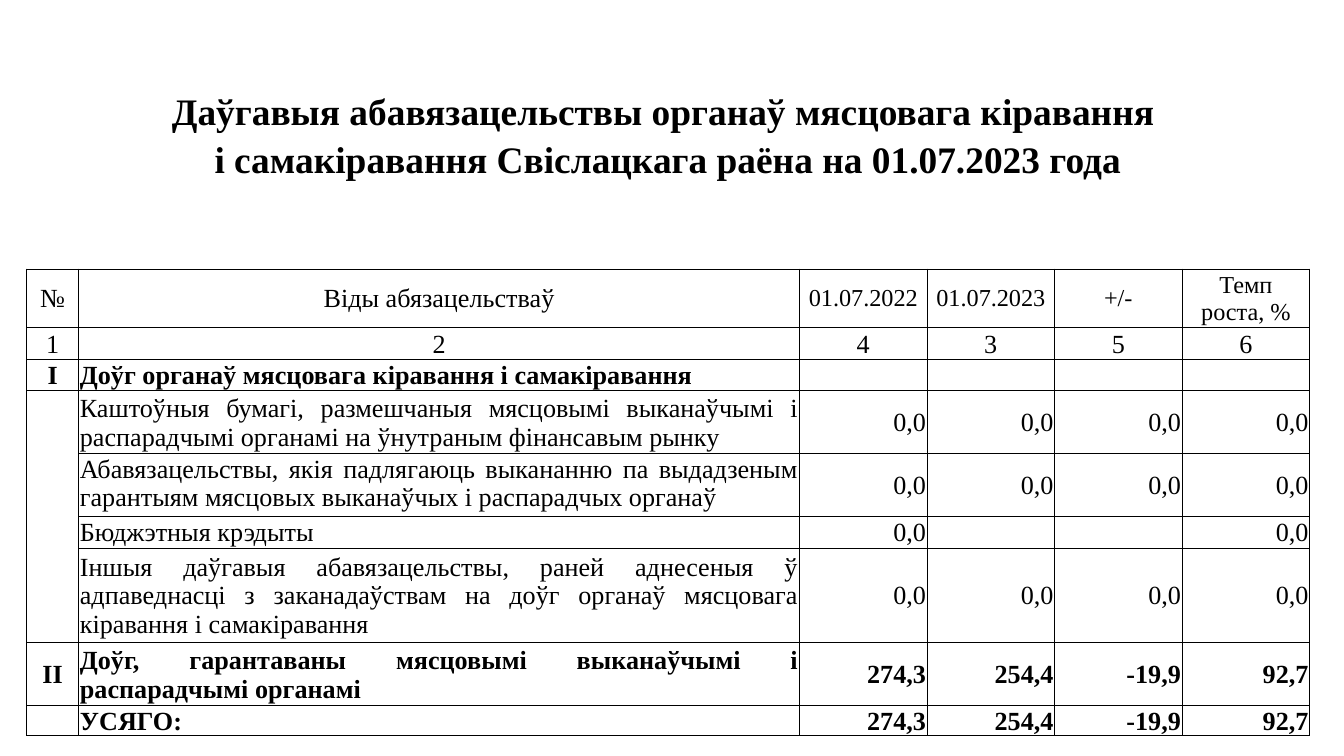
from lxml.etree import SubElement
from pptx import Presentation
from pptx.dml.color import RGBColor
from pptx.enum.text import MSO_ANCHOR, PP_ALIGN
from pptx.oxml.ns import qn
from pptx.util import Cm, Pt

FONT = "Times New Roman"
BLACK, WHITE = "000000", "FFFFFF"

# Content
TITLE = ["Даўгавыя абавязацельствы органаў мясцовага кіравання ",
         "і самакіравання Свіслацкага раёна на 01.07.2023 года"]
HEADER = ["№", "Віды абязацельстваў", "01.07.2022", "01.07.2023", "+/-", "Темп\nроста, %"]
NUMBERS = ["1", "2", "4", "3", "5", "6"]
ZEROS = ["0,0"] * 4
TOTALS = ["274,3", "254,4", "-19,9", "92,7"]
DEBTS = [
    ["I", "Доўг органаў мясцовага кіравання і самакіравання", "", "", "", ""],
    ["", "Каштоўныя бумагі, размешчаныя мясцовымі выканаўчымі і распарадчымі "
         "органамі на ўнутраным фінансавым рынку", *ZEROS],
    ["", "Абавязацельствы, якія падлягаюць выкананню па выдадзеным гарантыям "
         "мясцовых выканаўчых і распарадчых органаў", *ZEROS],
    ["", "Бюджэтныя крэдыты", "0,0", "", "", "0,0"],
    ["", "Іншыя даўгавыя абавязацельствы, раней аднесеныя ў адпаведнасці з "
         "заканадаўствам на доўг органаў мясцовага кіравання і самакіравання", *ZEROS],
    ["II", "Доўг, гарантаваны мясцовымі выканаўчымі і распарадчымі органамі", *TOTALS],
    ["", "УСЯГО:", *TOTALS],
]

# Layout in centimetres
COLS = [0.99, 13.62] + [2.41] * 4
ROWS = [0.97, 1.93, 0.97, 0.68, 1.1, 0.6, 0.6, 1.19, 1.19, 0.6, 1.78, 1.19, 0.46]
TITLE_ROW, HEADER_ROW, NUMBER_ROW, DEBT_ROW = 1, 4, 5, 6
BOLD_ROWS = {6, 11, 12}
OPEN_FIRST, OPEN_LAST = 7, 10    # rows sharing one open cell in the first column


def color(value):
    return RGBColor.from_string(value)


def write(cell, text, size=14, bold=False, align=PP_ALIGN.CENTER,
          anchor=MSO_ANCHOR.MIDDLE, spacing=None):
    tf = cell.text_frame
    cell.vertical_anchor = anchor
    cell.margin_left = cell.margin_right = cell.margin_top = Cm(0.02)
    cell.margin_bottom = 0
    for i, line in enumerate(text.split("\n")):
        p = tf.add_paragraph() if i else tf.paragraphs[0]
        p.alignment = align
        if spacing:
            p.line_spacing = spacing
        if not line:
            SubElement(p._p, qn("a:endParaRPr"), sz="800")
            continue
        r = p.add_run()
        r.text = line
        r.font.name, r.font.size, r.font.bold = FONT, Pt(size), bold
        r.font.color.rgb = color(BLACK)


def set_borders(cell, sides):
    tcPr = cell._tc.get_or_add_tcPr()
    for side in "LRTB":
        ln = SubElement(tcPr, qn(f"a:ln{side}"), w=str(Pt(0.5)))
        if side in sides:
            fill = SubElement(ln, qn("a:solidFill"))
            SubElement(fill, qn("a:srgbClr"), val=BLACK)
        else:
            SubElement(ln, qn("a:noFill"))


def border_sides(row, col):
    if row < HEADER_ROW:
        return "B" if row == HEADER_ROW - 1 else ""
    if col == 0 and OPEN_FIRST <= row <= OPEN_LAST:
        return "LR" + "T" * (row == OPEN_FIRST) + "B" * (row == OPEN_LAST)
    return "LRTB"


prs = Presentation()
prs.slide_width, prs.slide_height = Cm(25.4), Cm(14.28)
s = prs.slides.add_slide(prs.slide_layouts[6])

# Table grid
table = s.shapes.add_table(len(ROWS), len(COLS), Cm(0.5), Cm(0.53),
                           Cm(sum(COLS)), Cm(sum(ROWS))).table
table.first_row = table.horz_banding = False
for column, width in zip(table.columns, COLS):
    column.width = Cm(width)
for row, height in zip(table.rows, ROWS):
    row.height = Cm(height)

# Borders and fills
for i in range(len(ROWS)):
    for j in range(len(COLS)):
        cell = table.cell(i, j)
        set_borders(cell, border_sides(i, j))
        if i == TITLE_ROW + 1 or (i >= DEBT_ROW and j > 1):
            cell.fill.solid()
            cell.fill.fore_color.rgb = color(WHITE)
        else:
            cell.fill.background()

# Title and empty bands over the full width
for i in range(HEADER_ROW):
    cell = table.cell(i, 0)
    cell.merge(table.cell(i, len(COLS) - 1))
    if i == TITLE_ROW:
        write(cell, "\n".join(TITLE), size=20, bold=True,
              anchor=MSO_ANCHOR.BOTTOM, spacing=1.15)
    else:
        write(cell, "")

# Column headings and their numbers
for j, (heading, number) in enumerate(zip(HEADER, NUMBERS)):
    write(table.cell(HEADER_ROW, j), heading, size=14 if j < 2 else 13)
    write(table.cell(NUMBER_ROW, j), number, anchor=MSO_ANCHOR.BOTTOM)

# Debt rows
ALIGNS = [PP_ALIGN.CENTER, PP_ALIGN.JUSTIFY] + [PP_ALIGN.RIGHT] * 4
for i, values in enumerate(DEBTS, DEBT_ROW):
    for j, (value, align) in enumerate(zip(values, ALIGNS)):
        top = (i, j) == (8, 1)
        write(table.cell(i, j), value, bold=i in BOLD_ROWS, align=align,
              anchor=MSO_ANCHOR.TOP if top else MSO_ANCHOR.MIDDLE)

prs.save("out.pptx")
